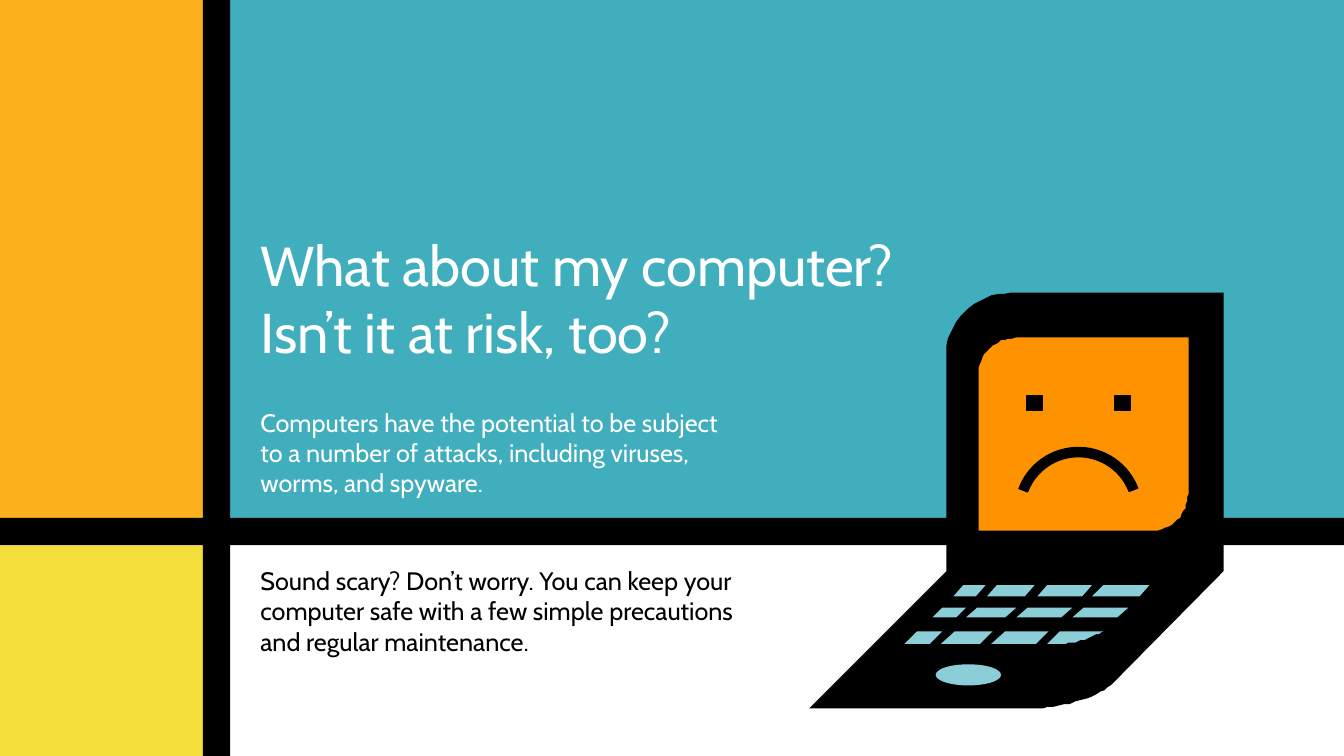
from math import cos, pi, sin

from pptx import Presentation
from pptx.dml.color import RGBColor
from pptx.enum.shapes import MSO_SHAPE
from pptx.enum.text import MSO_ANCHOR, MSO_AUTO_SIZE, PP_ALIGN
from pptx.util import Pt

RECT, OVAL, ARC = MSO_SHAPE.RECTANGLE, MSO_SHAPE.OVAL, MSO_SHAPE.BLOCK_ARC
TOP, MIDDLE, BOTTOM = MSO_ANCHOR.TOP, MSO_ANCHOR.MIDDLE, MSO_ANCHOR.BOTTOM
FONT = "Cabin"
COLORS = {"teal": "41AEBD", "amber": "FCB11C", "yellow": "F4DE3A", "black": "000000",
          "white": "FFFFFF", "key": "8CCED7", "screen": "FF9201"}

TITLE = "What about my computer?\vIsn’t it at risk, too?"
RISK = ("Computers have the potential to be subject to a number of attacks, "
        "including viruses, worms, and spyware.")
ADVICE = ("Sound scary? Don’t worry. You can keep your computer safe "
          "with a few simple precautions and regular maintenance.")

WIDTH, HEIGHT = 960, 540
BAR_X, BAR_Y, BAR = 144.9, 370, 19.5
RIGHT, LOWER = BAR_X + BAR, BAR_Y + BAR
PANELS = [
    ("teal", RIGHT, 0, WIDTH - RIGHT, BAR_Y),
    ("amber", 0, 0, BAR_X, BAR_Y),
    ("yellow", 0, LOWER, BAR_X, HEIGHT - LOWER),
    ("black", 0, BAR_Y, WIDTH, BAR),
    ("black", BAR_X, 0, BAR, HEIGHT),
]

KEY_ROWS = [
    (418.5, 426, 7, [(681.1, 15.8), (704.9, 27.4), (740.9, 32), (780.5, 33.1)]),
    (433.6, 441.2, 7.4, [(666, 16.6), (690.5, 28), (726.5, 31.7), (766.1, 32)]),
    (450.7, 460.1, 9, [(645.8, 18), (672.5, 27.6), (708.5, 31.7)]),
]


def paint(shape, color, outlined=False):
    shape.shadow.inherit = False
    shape.fill.solid()
    shape.fill.fore_color.rgb = RGBColor.from_string(COLORS[color])
    if outlined:
        shape.line.color.rgb = RGBColor.from_string(COLORS[color])
        shape.line.width = Pt(1)
    else:
        shape.line.fill.background()


def add_block(page, kind, color, left, top, width, height, outlined=False):
    shape = page.shapes.add_shape(kind, Pt(left), Pt(top), Pt(width), Pt(height))
    paint(shape, color, outlined)
    return shape


def add_outline(page, color, points):
    builder = page.shapes.build_freeform(*points[0], scale=Pt(1))
    builder.add_line_segments(points[1:], close=True)
    paint(builder.convert_to_shape(), color)


def bend(start, corner, end, steps=16):
    angles = [pi / 2 * step / steps for step in range(steps + 1)]
    return [tuple(c + (s - c) * (1 - sin(angle)) + (e - c) * (1 - cos(angle))
                  for s, c, e in zip(start, corner, end)) for angle in angles]


def write(box, text, size, color, anchor, inset):
    frame = box.text_frame
    frame.text = text
    frame.word_wrap = True
    frame.auto_size = MSO_AUTO_SIZE.NONE
    frame.vertical_anchor = anchor
    frame.margin_left = frame.margin_right = Pt(21.6)
    frame.margin_top = frame.margin_bottom = Pt(inset)
    para = frame.paragraphs[0]
    para.alignment = PP_ALIGN.LEFT
    para.font.name = FONT
    para.font.size = Pt(size)
    para.font.color.rgb = RGBColor.from_string(COLORS[color])


def draw_laptop(page):
    add_outline(page, "black", [
        (874.2, 209.3), *bend((721.6, 209.3), (675.5, 209.3), (675.5, 256)),
        (675.5, 408), (577.6, 505.6),
        *bend((741, 505.6), (777.6, 505.6), (795.6, 487.4)), (874.2, 408)])
    for top, bottom, slant, keys in KEY_ROWS:
        for left, width in keys:
            add_outline(page, "key", [(left + slant, top), (left + slant + width, top),
                                      (left + width, bottom), (left, bottom)])
    add_outline(page, "key", [(756.8, 450.7), (748.1, 460.1),
                              *bend((754.6, 460.1), (774, 460.1), (787.7, 450.7))])
    add_block(page, OVAL, "key", 668.3, 474.5, 46.8, 15.1)
    add_outline(page, "screen", [
        (848.6, 241.4), *bend((725.8, 241.4), (698.6, 241.4), (698.6, 267.8)),
        (698.6, 379.2), *bend((822.2, 379.2), (848.6, 379.2), (848.6, 352.8))])
    for eye_left in (733.5, 796.3):
        add_block(page, RECT, "black", eye_left, 282.4, 10.8, 10.8, outlined=True)
    mouth = add_block(page, ARC, "black", 725, 319.7, 90.7, 90.7, outlined=True)
    for index, value in enumerate((120.408, 203.303, 0.072)):
        mouth.adjustments[index] = value


def main():
    deck = Presentation()
    deck.slide_width, deck.slide_height = Pt(WIDTH), Pt(HEIGHT)
    page = deck.slides.add_slide(deck.slide_layouts[5])
    for color, *place in PANELS:
        add_block(page, RECT, color, *place)
    for text, color, top, anchor in ((RISK, "white", 275.8, BOTTOM),
                                     (ADVICE, "black", LOWER, TOP)):
        box = page.shapes.add_textbox(Pt(RIGHT), Pt(top), Pt(382.3), Pt(94.3))
        write(box, text, 18, color, anchor, 14.4)
    draw_laptop(page)

    title = page.shapes.title
    title.left, title.top, title.width, title.height = Pt(RIGHT), Pt(153.4), Pt(715.7), Pt(118.8)
    write(title, TITLE, 40, "white", MIDDLE, 10.8)
    page.shapes._spTree.append(title._element)
    deck.save("out.pptx")


if __name__ == "__main__":
    main()
